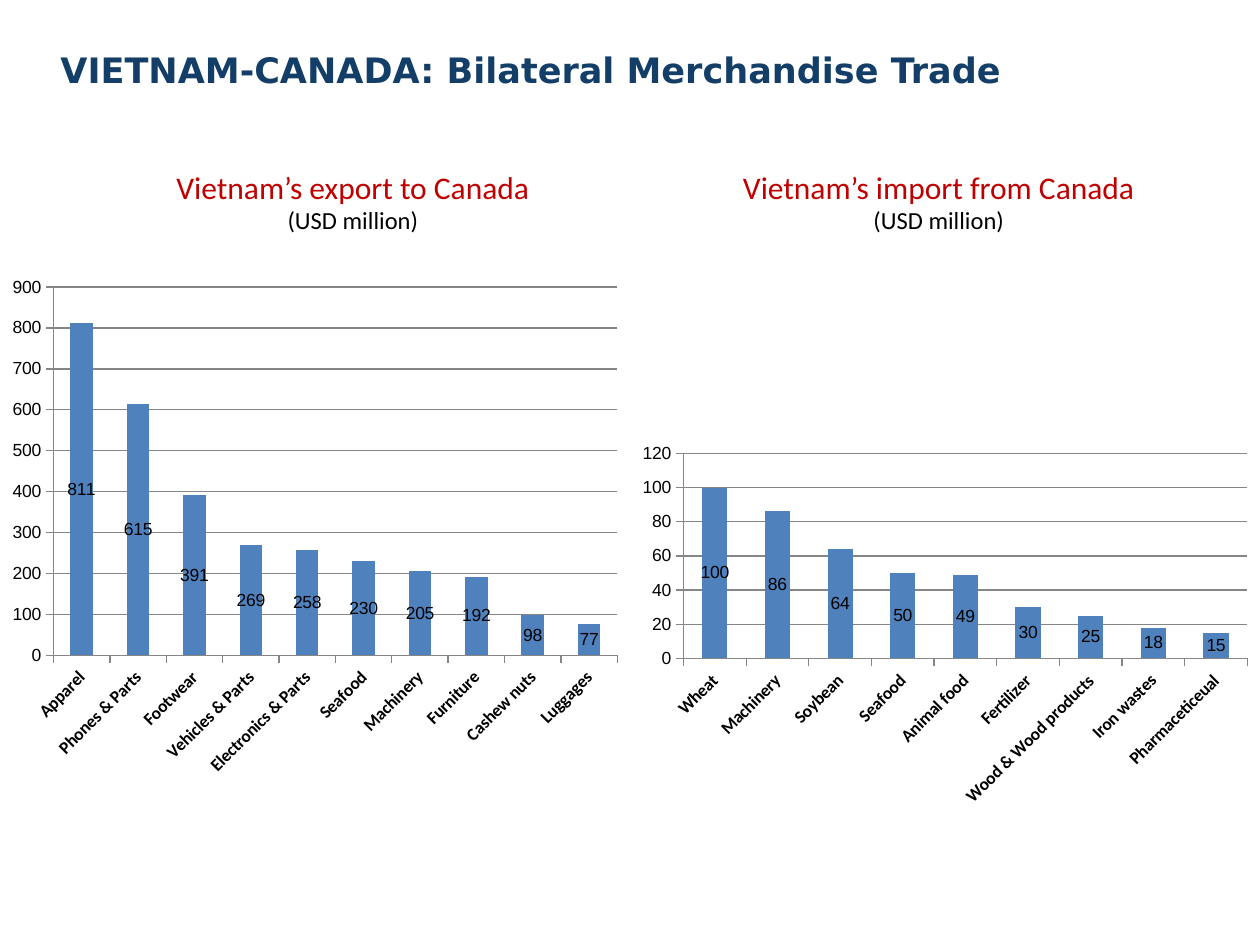
from dataclasses import dataclass

from pptx import Presentation
from pptx.chart.data import CategoryChartData
from pptx.dml.color import RGBColor
from pptx.enum.chart import XL_CHART_TYPE, XL_LABEL_POSITION, XL_TICK_MARK
from pptx.enum.text import PP_ALIGN
from pptx.slide import Slide
from pptx.text.text import Font
from pptx.util import Cm, Pt

COLORS = {
    "title": "133E68",
    "heading": "C00000",
    "text": "000000",
    "bar": "4F81BD",
    "line": "868686",
}


@dataclass
class TextLine:
    text: str
    size: int
    color: str
    font: str = "Calibri"
    bold: bool = False


@dataclass
class TradePanel:
    heading: str
    heading_left: float
    chart_left: float
    chart_top: float
    chart_height: float
    axis_maximum: int
    axis_step: int
    values: dict[str, int]


TITLE = TextLine("VIETNAM-CANADA: Bilateral Merchandise Trade", 20, "title",
                 "DejaVu Sans", True)
PANELS = [
    TradePanel(
        "Vietnam’s export to Canada", 1.27, 0, 5.38, 10.46, 900, 100,
        {"Apparel": 811, "Phones & Parts": 615, "Footwear": 391,
         "Vehicles & Parts": 269, "Electronics & Parts": 258, "Seafood": 230,
         "Machinery": 205, "Furniture": 192, "Cashew nuts": 98, "Luggages": 77},
    ),
    TradePanel(
        "Vietnam’s import from Canada", 13.08, 12.7, 8.79, 7.62, 120, 20,
        {"Wheat": 100, "Machinery": 86, "Soybean": 64, "Seafood": 50,
         "Animal food": 49, "Fertilizer": 30, "Wood & Wood products": 25,
         "Iron wastes": 18, "Pharmaceticeual": 15},
    ),
]


def color(name: str) -> RGBColor:
    return RGBColor.from_string(COLORS[name])


def style_font(font: Font, name: str, size: int, color_name: str, bold: bool) -> None:
    font.name = name
    font.size = Pt(size)
    font.bold = bold
    font.color.rgb = color(color_name)


def add_text(slide: Slide, left: float, top: float, width: float, height: float,
             lines: list[TextLine], alignment: PP_ALIGN, indent: float = 0) -> None:
    box = slide.shapes.add_textbox(Cm(left), Cm(top), Cm(width), Cm(height))
    text_frame = box.text_frame
    text_frame.word_wrap = True
    text_frame.margin_left = Cm(indent)
    text_frame.margin_right = text_frame.margin_top = text_frame.margin_bottom = 0
    text_frame.text = "\n".join(line.text for line in lines)
    for paragraph, line in zip(text_frame.paragraphs, lines):
        paragraph.alignment = alignment
        style_font(paragraph.runs[0].font, line.font, line.size, line.color, line.bold)


def add_trade_chart(slide: Slide, panel: TradePanel) -> None:
    chart_data = CategoryChartData(number_format="#,##0")
    chart_data.categories = list(panel.values)
    chart_data.add_series("Series 1", list(panel.values.values()))
    chart = slide.shapes.add_chart(
        XL_CHART_TYPE.COLUMN_STACKED, Cm(panel.chart_left), Cm(panel.chart_top),
        Cm(12.7), Cm(panel.chart_height), chart_data,
    ).chart
    chart.has_legend = False
    chart.has_title = False
    style_font(chart.font, "Arial", 10, "text", False)

    category_axis, value_axis = chart.category_axis, chart.value_axis
    for axis in (category_axis, value_axis):
        axis.major_tick_mark = XL_TICK_MARK.OUTSIDE
        axis.format.line.color.rgb = color("line")
    style_font(category_axis.tick_labels.font, "Calibri", 10, "text", True)
    text_body = category_axis.tick_labels.font._element.getparent().getparent().getparent()
    text_body.bodyPr.set("rot", "-2700000")
    value_axis.minimum_scale = 0
    value_axis.maximum_scale = panel.axis_maximum
    value_axis.major_unit = panel.axis_step
    value_axis.has_major_gridlines = True
    value_axis.major_gridlines.format.line.color.rgb = color("line")
    value_axis.tick_labels.number_format = "#,##0"
    value_axis.tick_labels.number_format_is_linked = False

    plot = chart.plots[0]
    plot.gap_width = 150
    plot.overlap = 100
    plot.vary_by_categories = False
    plot.has_data_labels = True
    labels = plot.data_labels
    labels.show_value = True
    labels.number_format = "#,##0"
    labels.number_format_is_linked = False
    labels.position = XL_LABEL_POSITION.CENTER
    fill = plot.series[0].format.fill
    fill.solid()
    fill.fore_color.rgb = color("bar")


def main() -> None:
    presentation = Presentation()
    presentation.slide_width, presentation.slide_height = Cm(25.4), Cm(19.05)
    slide = presentation.slides.add_slide(presentation.slide_layouts[6])
    add_text(slide, 1.22, 0.97, 22.99, 1.68, [TITLE], PP_ALIGN.LEFT)
    for panel in PANELS:
        lines = [TextLine(panel.heading, 18, "heading"),
                 TextLine("(USD million)", 14, "text")]
        add_text(slide, panel.heading_left, 3.38, 11.05, 13.56, lines,
                 PP_ALIGN.CENTER, indent=0.64)
        add_trade_chart(slide, panel)
    presentation.save("out.pptx")


if __name__ == "__main__":
    main()
